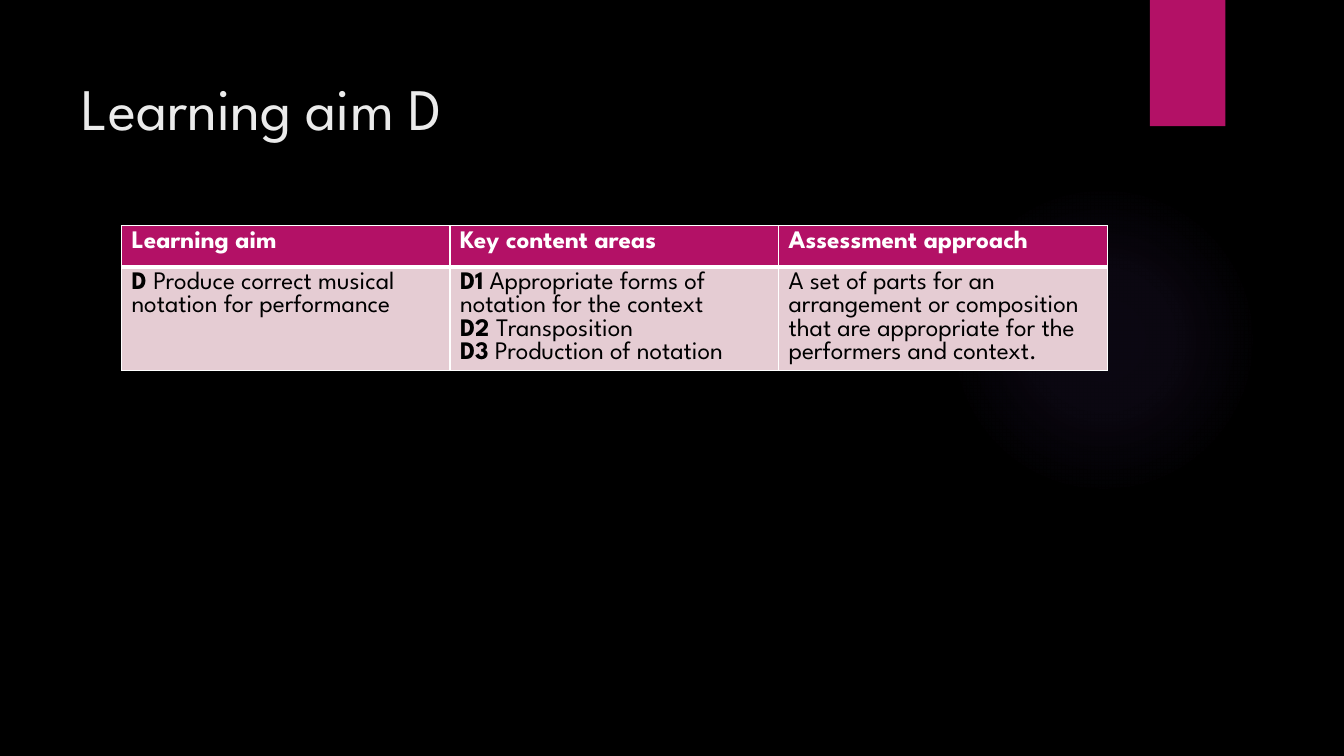
"""Build the Learning aim D slide with its assessment table."""
from dataclasses import dataclass
from typing import Any

from lxml import etree
from pptx import Presentation
from pptx.dml.color import RGBColor
from pptx.enum.shapes import MSO_SHAPE
from pptx.enum.text import MSO_ANCHOR, MSO_AUTO_SIZE, PP_ALIGN
from pptx.util import Cm, Pt

OVAL, RECTANGLE = MSO_SHAPE.OVAL, MSO_SHAPE.RECTANGLE
TOP, LEFT, NO_FIT = MSO_ANCHOR.TOP, PP_ALIGN.LEFT, MSO_AUTO_SIZE.NONE
NAMESPACE = "http://schemas.openxmlformats.org/drawingml/2006/main"
TITLE_ONLY = 5


@dataclass(frozen=True)
class Theme:
    font: str = "League Spartan"
    background: str = "000000"
    accent: str = "B31166"
    glow: str = "9B6BF2"
    title: str = "EBEBEB"
    light: str = "FFFFFF"
    dark: str = "000000"
    body_fill: str = "E5CCD3"
    title_size: int = 42
    table_size: int = 18
    thin: int = 1
    thick: int = 3


@dataclass(frozen=True)
class Area:
    left: float
    top: float
    width: float
    height: float

    def lengths(self) -> tuple[Cm, Cm, Cm, Cm]:
        return Cm(self.left), Cm(self.top), Cm(self.width), Cm(self.height)


@dataclass(frozen=True)
class Span:
    text: str
    bold: bool = False


@dataclass(frozen=True)
class Row:
    height: float
    fill: str
    color: str
    top_line: int
    bottom_line: int
    cells: list[list[list[Span]]]


THEME = Theme()
GLOW = Area(23.9, 4.65, 7.82, 7.82)
RIBBON = Area(28.98, 0, 1.9, 3.18)
TITLE = Area(1.8, 1.27, 27.94, 3.89)
TABLE = Area(3.06, 5.69, 24.84, 3.65)
GLOW_STOPS = [(0, 7), (36, 6), (69, 0)]

ROWS = [
    Row(1.04, THEME.accent, THEME.light, THEME.thin, THEME.thick, [
        [[Span("Learning aim", True)]],
        [[Span("Key content areas", True)]],
        [[Span("Assessment approach", True)]],
    ]),
    Row(2.61, THEME.body_fill, THEME.dark, THEME.thick, THEME.thin, [
        [[Span("D ", True), Span("Produce correct musical")],
         [Span("notation for performance")]],
        [[Span("D1", True), Span(" Appropriate forms of")],
         [Span("notation for the context")],
         [Span("D2 ", True), Span("Transposition")],
         [Span("D3", True), Span(" Production of notation")]],
        [[Span("A set of parts for an")],
         [Span("arrangement or composition")],
         [Span("that are appropriate for the")],
         [Span("performers and context.")]],
    ]),
]


def apply_format(target: Any, values: dict[str, Any]) -> None:
    for name, value in values.items():
        setattr(target, name, value)


def add_span(para: Any, span: Span, size: int, color: str) -> None:
    run = para.add_run()
    run.text = span.text
    apply_format(run.font, {"name": THEME.font, "size": Pt(size), "bold": span.bold})
    run.font.color.rgb = RGBColor.from_string(color)


def drawing_element(tag: str, content: str, attributes: str = "") -> Any:
    return etree.fromstring(
        f'<a:{tag} xmlns:a="{NAMESPACE}" {attributes}>{content}</a:{tag}>')


def color_xml(color: str, opacity: int) -> str:
    return f'<a:srgbClr val="{color}"><a:alpha val="{opacity * 1000}"/></a:srgbClr>'


def add_plain_shape(page: Any, kind: MSO_SHAPE, area: Area, color: str) -> Any:
    shape = page.shapes.add_shape(kind, *area.lengths())
    shape.shadow.inherit = False
    shape.fill.solid()
    shape.fill.fore_color.rgb = RGBColor.from_string(color)
    shape.line.fill.background()
    return shape


def add_glow(page: Any) -> None:
    properties = add_plain_shape(page, OVAL, GLOW, THEME.glow).element.spPr
    stops = "".join(f'<a:gs pos="{position * 1000}">{color_xml(THEME.glow, opacity)}</a:gs>'
                    for position, opacity in GLOW_STOPS)
    gradient = drawing_element(
        "gradFill",
        f'<a:gsLst>{stops}</a:gsLst><a:path path="circle">'
        '<a:fillToRect l="50000" t="50000" r="50000" b="50000"/></a:path>')
    properties.replace(properties.find(f"{{{NAMESPACE}}}solidFill"), gradient)


def add_ribbon(page: Any) -> None:
    properties = add_plain_shape(page, RECTANGLE, RIBBON, THEME.accent).element.spPr
    shadow = drawing_element(
        "outerShdw", color_xml("000000", 45),
        f'blurRad="{Pt(3)}" dist="{Pt(2)}" dir="5400000" rotWithShape="0"')
    properties.find(f"{{{NAMESPACE}}}effectLst").append(shadow)


def add_title(page: Any, text: str) -> None:
    box = page.shapes.title
    apply_format(box, dict(zip(("left", "top", "width", "height"), TITLE.lengths())))
    frame = box.text_frame
    apply_format(frame, {"word_wrap": True, "auto_size": NO_FIT,
                         "vertical_anchor": TOP, "margin_top": Cm(0.53)})
    para = frame.paragraphs[0]
    para.alignment = LEFT
    add_span(para, Span(text), THEME.title_size, THEME.title)


def add_borders(cell: Any, row: Row) -> None:
    widths = {"lnL": THEME.thin, "lnR": THEME.thin,
              "lnT": row.top_line, "lnB": row.bottom_line}
    line_fill = f'<a:solidFill><a:srgbClr val="{THEME.light}"/></a:solidFill>'
    properties = cell._tc.get_or_add_tcPr()
    for tag, width in widths.items():
        properties.append(drawing_element(tag, line_fill, f'w="{Pt(width)}"'))


def fill_cell(cell: Any, row: Row, paragraphs: list[list[Span]]) -> None:
    add_borders(cell, row)
    cell.fill.solid()
    cell.fill.fore_color.rgb = RGBColor.from_string(row.fill)
    for index, spans in enumerate(paragraphs):
        frame = cell.text_frame
        para = frame.add_paragraph() if index else frame.paragraphs[0]
        for span in spans:
            add_span(para, span, THEME.table_size, row.color)


def add_aim_table(page: Any) -> None:
    columns = len(ROWS[0].cells)
    table = page.shapes.add_table(len(ROWS), columns, *TABLE.lengths()).table
    for column in table.columns:
        column.width = Cm(TABLE.width / columns)
    for row_index, row in enumerate(ROWS):
        table.rows[row_index].height = Cm(row.height)
        for column_index, paragraphs in enumerate(row.cells):
            fill_cell(table.cell(row_index, column_index), row, paragraphs)


def main() -> None:
    deck = Presentation()
    apply_format(deck, {"slide_width": Cm(33.87), "slide_height": Cm(19.05)})
    page = deck.slides.add_slide(deck.slide_layouts[TITLE_ONLY])
    page.background.fill.solid()
    page.background.fill.fore_color.rgb = RGBColor.from_string(THEME.background)
    add_glow(page)
    add_ribbon(page)
    add_title(page, "Learning aim D")
    add_aim_table(page)
    deck.save("out.pptx")


if __name__ == "__main__":
    main()
